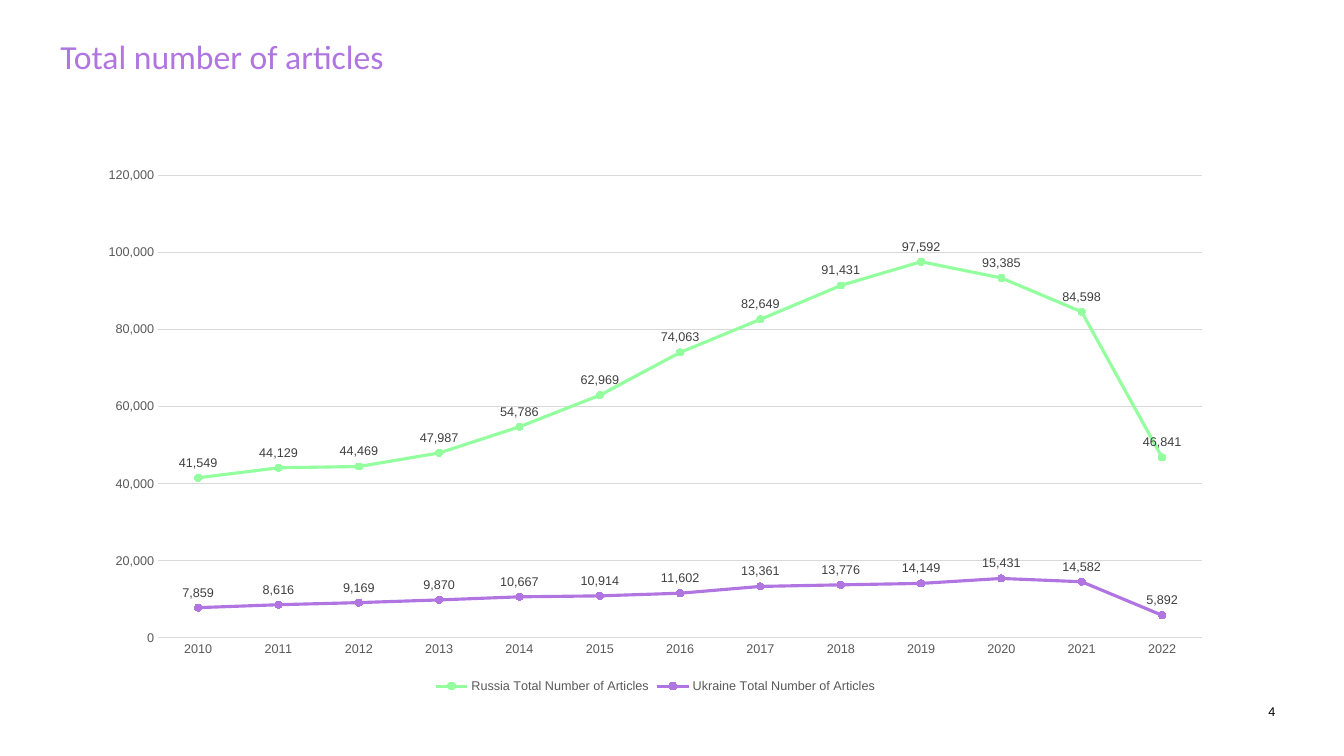
from dataclasses import dataclass

from pptx import Presentation
from pptx import util as u
from pptx.chart.data import CategoryChartData
from pptx.dml.color import RGBColor
from pptx.enum import chart as ch
from pptx.enum import text

SLIDE_W, SLIDE_H = u.Inches(13.33), u.Inches(7.5)
COLOURS = {"russia": "93FF9E", "ukraine": "B175E1", "grid": "D9D9D9",
           "axis": "595959", "label": "404040", "black": "000000"}
YEARS = [str(year) for year in range(2010, 2023)]
NUMBER_FORMAT = "#,##0"


@dataclass(frozen=True)
class Area:
    """Left, top, width and height as shares of the slide."""
    left: float
    top: float
    width: float
    height: float

    def box(self) -> dict[str, int]:
        return {"left": round(self.left * SLIDE_W), "top": round(self.top * SLIDE_H),
                "width": round(self.width * SLIDE_W), "height": round(self.height * SLIDE_H)}


@dataclass(frozen=True)
class Country:
    name: str
    colour: str
    articles: tuple[int, ...]


TITLE_AREA = Area(0.6 / 13.33, 0.4 / 7.5, 9.06 / 13.33, 0.28 / 7.5)
NUMBER_AREA = Area(12.58 / 13.33, 6.94 / 7.5, 0.24 / 13.33, 0.24 / 7.5)
CHART_AREA = Area(0.85 / 13.33, 1.56 / 7.5, 11.3 / 13.33, 5.36 / 7.5)
COUNTRIES = [
    Country("Russia", "russia", (41549, 44129, 44469, 47987, 54786, 62969, 74063,
                                 82649, 91431, 97592, 93385, 84598, 46841)),
    Country("Ukraine", "ukraine", (7859, 8616, 9169, 9870, 10667, 10914, 11602,
                                   13361, 13776, 14149, 15431, 14582, 5892)),
]


def apply(target, values: dict) -> None:
    for name, value in values.items():
        setattr(target, name, value)


def rgb(colour: str) -> RGBColor:
    return RGBColor.from_string(COLOURS[colour])


def style_font(font, size: float, colour: str, name: str = "Arial") -> None:
    apply(font, {"size": u.Pt(size), "name": name, "bold": False})
    font.color.rgb = rgb(colour)


def style_line(line, colour: str, width: float) -> None:
    line.color.rgb = rgb(colour)
    line.width = u.Pt(width)


def write(holder, wording: str, anchor, size: float, colour: str, font: str):
    """Fill a text holder with one left-aligned line without insets."""
    frame = holder.text_frame
    apply(frame, {"margin_left": 0, "margin_top": 0, "margin_right": 0,
                  "margin_bottom": 0, "word_wrap": True,
                  "auto_size": text.MSO_AUTO_SIZE.NONE, "vertical_anchor": anchor})
    line = frame.paragraphs[0]
    line.alignment = text.PP_ALIGN.LEFT
    run = line.add_run()
    run.text = wording
    style_font(run.font, size, colour, font)
    return line


def style_axis(axis) -> None:
    apply(axis, {"major_tick_mark": ch.XL_TICK_MARK.NONE,
                 "minor_tick_mark": ch.XL_TICK_MARK.NONE})
    style_font(axis.tick_labels.font, 9, "axis")


def style_series(series, colour: str) -> None:
    series.smooth = False
    style_line(series.format.line, colour, 2.25)
    apply(series.marker, {"style": ch.XL_MARKER_STYLE.CIRCLE, "size": 5})
    series.marker.format.fill.solid()
    series.marker.format.fill.fore_color.rgb = rgb(colour)
    style_line(series.marker.format.line, colour, 0.75)
    labels = series.data_labels
    apply(labels, {"show_value": True, "position": ch.XL_LABEL_POSITION.ABOVE,
                   "number_format": NUMBER_FORMAT, "number_format_is_linked": False})
    style_font(labels.font, 9, "label")


def add_articles_chart(slide) -> None:
    data = CategoryChartData(number_format=NUMBER_FORMAT)
    data.categories = YEARS
    for country in COUNTRIES:
        data.add_series(f"{country.name} Total Number of Articles", country.articles)
    area = CHART_AREA.box()
    chart = slide.shapes.add_chart(ch.XL_CHART_TYPE.LINE_MARKERS, area["left"], area["top"],
                                   area["width"], area["height"], data).chart
    apply(chart, {"has_title": False, "has_legend": True})
    style_font(chart.font, 10, "black")
    apply(chart.legend, {"position": ch.XL_LEGEND_POSITION.BOTTOM, "include_in_layout": False})
    style_font(chart.legend.font, 9, "axis")

    years, counts = chart.category_axis, chart.value_axis
    style_axis(years)
    style_axis(counts)
    style_line(years.format.line, "grid", 0.75)
    counts.format.line.fill.background()
    apply(counts, {"has_major_gridlines": True, "minimum_scale": 0,
                   "maximum_scale": 120000, "major_unit": 20000})
    style_line(counts.major_gridlines.format.line, "grid", 0.75)
    apply(counts.tick_labels, {"number_format": NUMBER_FORMAT,
                               "number_format_is_linked": False})

    chart.plots[0].vary_by_categories = False
    for series, country in zip(chart.plots[0].series, COUNTRIES):
        style_series(series, country.colour)


def main() -> None:
    deck = Presentation()
    apply(deck, {"slide_width": SLIDE_W, "slide_height": SLIDE_H})
    slide = deck.slides.add_slide(deck.slide_layouts[5])

    title = slide.shapes.title
    apply(title, TITLE_AREA.box())
    heading = write(title, "Total number of articles", text.MSO_ANCHOR.TOP,
                    24, "ukraine", "Calibri")
    heading.line_spacing = 0.9

    page_number = slide.shapes.add_textbox(**NUMBER_AREA.box())
    write(page_number, "4", text.MSO_ANCHOR.MIDDLE, 9, "black", "Arial")
    add_articles_chart(slide)
    deck.save("out.pptx")


if __name__ == "__main__":
    main()
